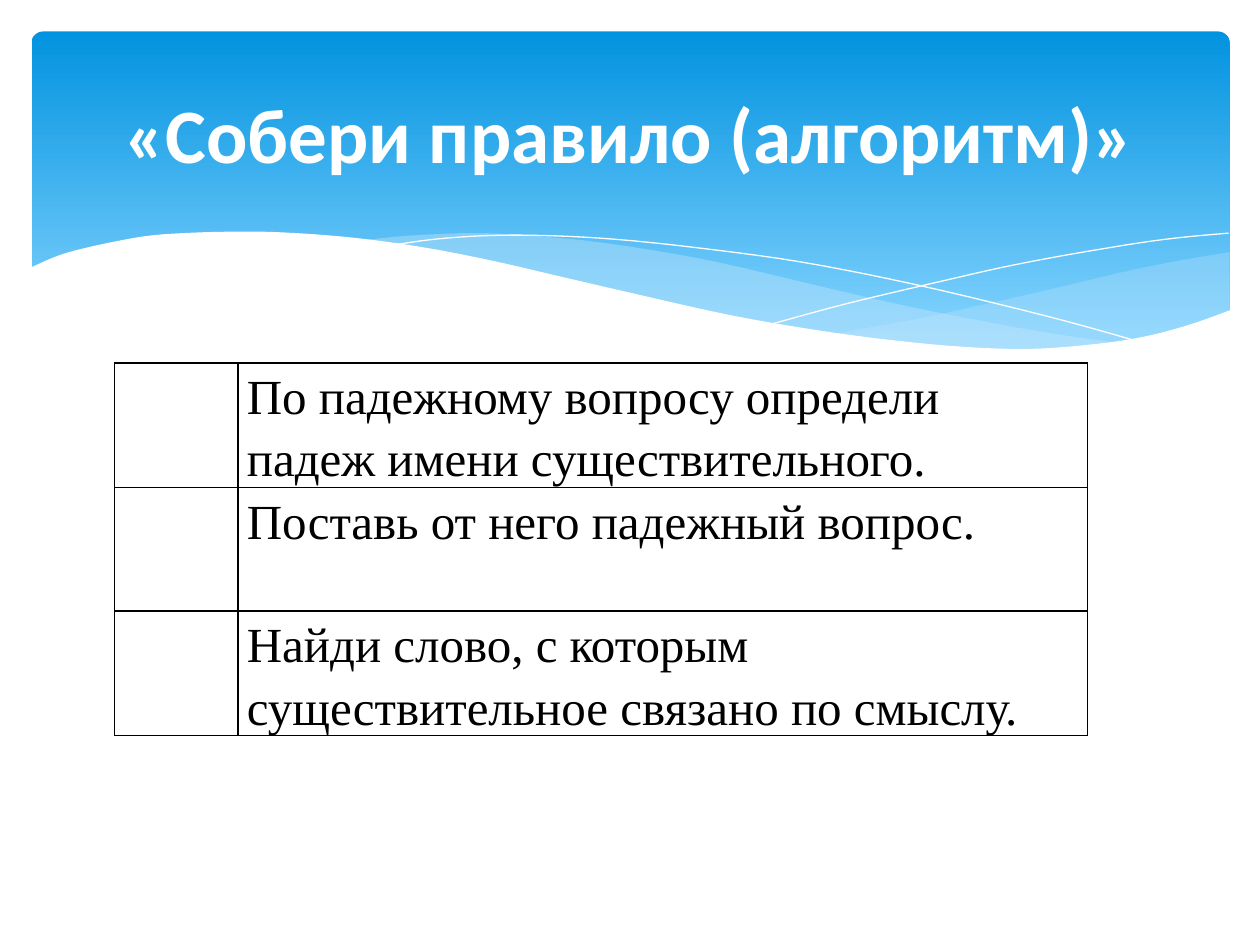
import pptx
import pptx.util
import pptx.dml.color
import pptx.enum.shapes
import pptx.enum.text
import pptx.oxml
from pptx.oxml.ns import nsdecls, qn

Inches, Pt = pptx.util.Inches, pptx.util.Pt

TITLE = "«Собери правило (алгоритм)»"
RULES = [
    "По падежному вопросу определи падеж имени существительного.",
    "Поставь от него падежный вопрос.",
    "Найди слово, с которым существительное связано по смыслу.",
]
COL_WIDTHS = [0.98, 6.74]
ROW_HEIGHT = 0.98

# Waves: each shape is a chain of edges, each edge a smooth curve through its points
FILLED_WAVES = [
    ([[(9.76, 2), (9.35, 2.07), (8.91, 2.16), (8.32, 2.3), (7.79, 2.42), (7.29, 2.53), (6.61, 2.65)],
      [(6.61, 2.65), (7.05, 2.71), (7.57, 2.76), (8.03, 2.78), (8.54, 2.76), (8.97, 2.7),
       (9.35, 2.62), (9.76, 2.47)]], "C6E7FC", 29),
    ([[(8.93, 2.73), (8.37, 2.65), (7.75, 2.54), (7.06, 2.4), (6.29, 2.22), (5.69, 2.08), (5.14, 1.98),
       (4.65, 1.91), (4.2, 1.87), (3.8, 1.85), (3.44, 1.86), (3.13, 1.88), (2.86, 1.91)],
      [(2.86, 1.91), (3.42, 1.99), (4.04, 2.11), (4.49, 2.22), (5.3, 2.4), (6.01, 2.55), (6.65, 2.66),
       (7.22, 2.74), (7.73, 2.77), (8.18, 2.78), (8.57, 2.77), (8.93, 2.73)]], "C6E7FC", 40),
]
LINES = [
    [(3.09, 1.95), (3.44, 1.9), (3.87, 1.87), (4.33, 1.87), (4.89, 1.9), (5.56, 1.97), (6.36, 2.08),
     (7.27, 2.26), (8.31, 2.51), (9.07, 2.72)],
    [(6.13, 2.57), (6.72, 2.41), (7.48, 2.23), (8.06, 2.1), (8.66, 1.99), (9.24, 1.9), (9.75, 1.85)],
]
WHITE_WAVE = [
    [(9.77, 2.46), (9.4, 2.59), (8.99, 2.69), (8.5, 2.75), (8.09, 2.77), (7.61, 2.75), (7.08, 2.7),
     (6.48, 2.62), (5.79, 2.5), (5.03, 2.33), (4.47, 2.2), (3.91, 2.07), (3.4, 1.97), (2.92, 1.9),
     (2.5, 1.86), (2.11, 1.84), (1.77, 1.84), (1.46, 1.85), (1.19, 1.87), (0.95, 1.91), (0.67, 1.97),
     (0.46, 2.03), (0.23, 2.13)],
    [(0.23, 3.29), (9.77, 3.29)],
]


def rgb(hex_color):
    return pptx.dml.color.RGBColor.from_string(hex_color)


def smooth(points, steps=5):
    """Catmull-Rom curve through the points."""
    padded = [points[0], *points, points[-1]]
    curve = [points[0]]
    for a, b, c, d in zip(padded, padded[1:], padded[2:], padded[3:]):
        for i in range(1, steps + 1):
            t = i / steps
            curve.append(tuple(
                0.5 * (2 * q + (r - p) * t + (2 * p - 5 * q + 4 * r - s) * t ** 2
                       + (3 * q - p - 3 * r + s) * t ** 3)
                for p, q, r, s in zip(a, b, c, d)))
    return curve


def add_curve(edges, fill=None, alpha=100, line=None):
    pts = [(Inches(x), Inches(y)) for edge in edges for x, y in smooth(edge)]
    builder = slide.shapes.build_freeform(*pts[0], scale=1.0)
    builder.add_line_segments(pts[1:], close=fill is not None)
    sp = builder.convert_to_shape()
    sp.shadow.inherit = False
    if fill:
        sp.fill.solid()
        sp.fill.fore_color.rgb = rgb(fill)
        if alpha < 100:
            color = sp.fill._xPr.find(".//" + qn("a:srgbClr"))
            color.append(pptx.oxml.parse_xml(f'<a:alpha {nsdecls("a")} val="{alpha * 1000}"/>'))
    else:
        sp.fill.background()
    if line:
        sp.line.color.rgb = rgb(line)
        sp.line.width = Pt(0)
    else:
        sp.line.fill.background()


def write(tf, text, size=28, font="Times New Roman", color="000000", bold=False, align=None, spacing=None):
    p = tf.paragraphs[0]
    p.alignment, p.line_spacing = align, spacing
    r = p.add_run()
    r.text = text
    r.font.size, r.font.name, r.font.bold = Pt(size), font, bold
    r.font.color.rgb = rgb(color)


def set_borders(cell, color="000000", width=1):
    tc_pr = cell._tc.get_or_add_tcPr()
    for side in "LRTB":
        tc_pr.append(pptx.oxml.parse_xml(
            f'<a:ln{side} {nsdecls("a")} w="{Pt(width)}"><a:solidFill>'
            f'<a:srgbClr val="{color}"/></a:solidFill></a:ln{side}>'))


prs = pptx.Presentation()
prs.slide_width, prs.slide_height = Inches(10), Inches(7.5)
slide = prs.slides.add_slide(prs.slide_layouts[6])

# Blue header panel
panel = slide.shapes.add_shape(pptx.enum.shapes.MSO_SHAPE.ROUNDED_RECTANGLE,
                               Inches(0.25), Inches(0.25), Inches(9.51), Inches(2.7))
panel.adjustments[0] = 0.034
panel.shadow.inherit = False
panel.line.fill.background()
panel.fill.gradient()
panel.fill.gradient_angle = 270
for stop, (position, color) in zip(panel.fill.gradient_stops, [(0, "0293E0"), (0.9, "83D3FE")]):
    stop.position = position
    stop.color.rgb = rgb(color)

# Waves over the header
for edges, color, alpha in FILLED_WAVES:
    add_curve(edges, fill=color, alpha=alpha)
for points in LINES:
    add_curve([points], line="FFFFFF")
add_curve(WHITE_WAVE[:1] + WHITE_WAVE[1:], fill="FFFFFF")

# Table of rules with an empty column for the order
table = slide.shapes.add_table(len(RULES), len(COL_WIDTHS), Inches(0.91), Inches(2.88),
                               Inches(sum(COL_WIDTHS)), Inches(ROW_HEIGHT * len(RULES))).table
table.first_row = table.horz_banding = False
for column, width in zip(table.columns, COL_WIDTHS):
    column.width = Inches(width)
for row, rule in zip(table.rows, RULES):
    row.height = Inches(ROW_HEIGHT)
    for cell in row.cells:
        set_borders(cell)
        cell.fill.background()
        cell.margin_left = cell.margin_right = Inches(0.07)
        cell.margin_top = cell.margin_bottom = 0
    write(row.cells[1].text_frame, rule, spacing=1.15)

# Title
title = slide.shapes.add_textbox(Inches(0.5), Inches(0.37), Inches(9), Inches(1.37))
tf = title.text_frame
tf.word_wrap = True
tf.vertical_anchor = pptx.enum.text.MSO_ANCHOR.MIDDLE
write(tf, TITLE, size=44, font="Calibri", color="FFFFFF", bold=True, align=pptx.enum.text.PP_ALIGN.CENTER)

prs.save("out.pptx")
